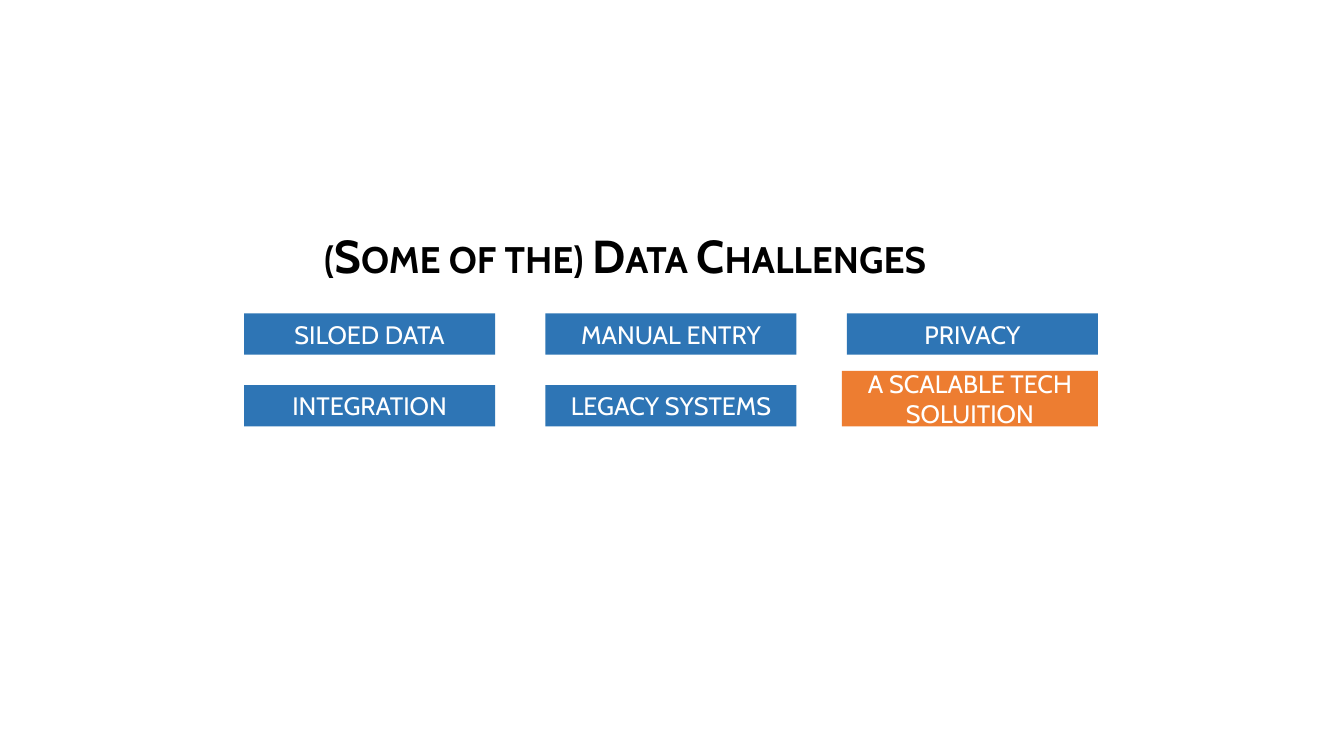
from pptx import Presentation
from pptx.dml.color import RGBColor
from pptx.enum.shapes import MSO_SHAPE
from pptx.enum.text import MSO_ANCHOR, MSO_AUTO_SIZE, PP_ALIGN
from pptx.util import Inches, Pt

RECTANGLE = MSO_SHAPE.RECTANGLE
TOP, MIDDLE = MSO_ANCHOR.TOP, MSO_ANCHOR.MIDDLE
CENTER = PP_ALIGN.CENTER
NO_AUTOFIT = MSO_AUTO_SIZE.NONE
TITLE_ONLY = 5

BLUE, ORANGE = "2E75B5", "ED7D31"
HEADING_FONT = {"name": "Cabin", "size": Pt(33), "bold": True}
CHALLENGE_FONT = {"name": "Cabin", "size": Pt(18), "bold": False}
FRAME = {"word_wrap": True, "auto_size": NO_AUTOFIT,
         "margin_left": Inches(0.1), "margin_right": Inches(0.1),
         "margin_top": Inches(0.05), "margin_bottom": Inches(0.05)}

HEADING_BOX = (2.28, 2.21, 7.84, 0.49)
CHALLENGES_BOX = (2.42, 3.11, 8.47, 1.12)
CHALLENGES = [["SILOED DATA", "MANUAL ENTRY", "PRIVACY"],
              ["INTEGRATION", "LEGACY SYSTEMS", "A SCALABLE TECH SOLUITION"]]
BAR_WIDTH, BAR_HEIGHT = 2.49, 0.41
GOAL_WIDTH, GOAL_HEIGHT = 2.54, 0.55


def color(hex_value):
    return RGBColor.from_string(hex_value)


def apply(target, values):
    for attribute, value in values.items():
        setattr(target, attribute, value)


def write(holder, wording, font_values, hex_value, anchor):
    frame = holder.text_frame
    apply(frame, {**FRAME, "vertical_anchor": anchor})
    paragraph = frame.paragraphs[0]
    apply(paragraph, {"alignment": CENTER, "line_spacing": 1.0})
    run = paragraph.add_run()
    run.text = wording
    apply(run.font, font_values)
    run.font.color.rgb = color(hex_value)
    return run


def add_heading(slide, box):
    heading = slide.shapes.title
    apply(heading, dict(zip(("left", "top", "width", "height"), map(Inches, box))))
    run = write(heading, "(Some of the) Data Challenges", HEADING_FONT, "000000", TOP)
    run.font._element.set("cap", "small")


def add_challenge(slide, wording, box, fill):
    bar = slide.shapes.add_shape(RECTANGLE, *map(Inches, box))
    bar.shadow.inherit = False
    bar.fill.solid()
    bar.fill.fore_color.rgb = color(fill)
    bar.line.fill.background()
    write(bar, wording, CHALLENGE_FONT, "FFFFFF", MIDDLE)


def add_challenges(slide, box):
    left, top, width, height = box
    column_step = (width - BAR_WIDTH) / (len(CHALLENGES[0]) - 1)
    row_step = (height - BAR_HEIGHT) / (len(CHALLENGES) - 1)
    for row, wordings in enumerate(CHALLENGES):
        for column, wording in enumerate(wordings):
            is_goal = wording == CHALLENGES[-1][-1]
            bar_width = GOAL_WIDTH if is_goal else BAR_WIDTH
            bar_height = GOAL_HEIGHT if is_goal else BAR_HEIGHT
            right = left + column * column_step + BAR_WIDTH
            bottom = top + row * row_step + BAR_HEIGHT
            add_challenge(slide, wording,
                          (right - bar_width, bottom - bar_height, bar_width, bar_height),
                          ORANGE if is_goal else BLUE)


def main():
    deck = Presentation()
    apply(deck, {"slide_width": Inches(13.33), "slide_height": Inches(7.5)})
    slide = deck.slides.add_slide(deck.slide_layouts[TITLE_ONLY])
    add_heading(slide, HEADING_BOX)
    add_challenges(slide, CHALLENGES_BOX)
    deck.save("out.pptx")


if __name__ == "__main__":
    main()
